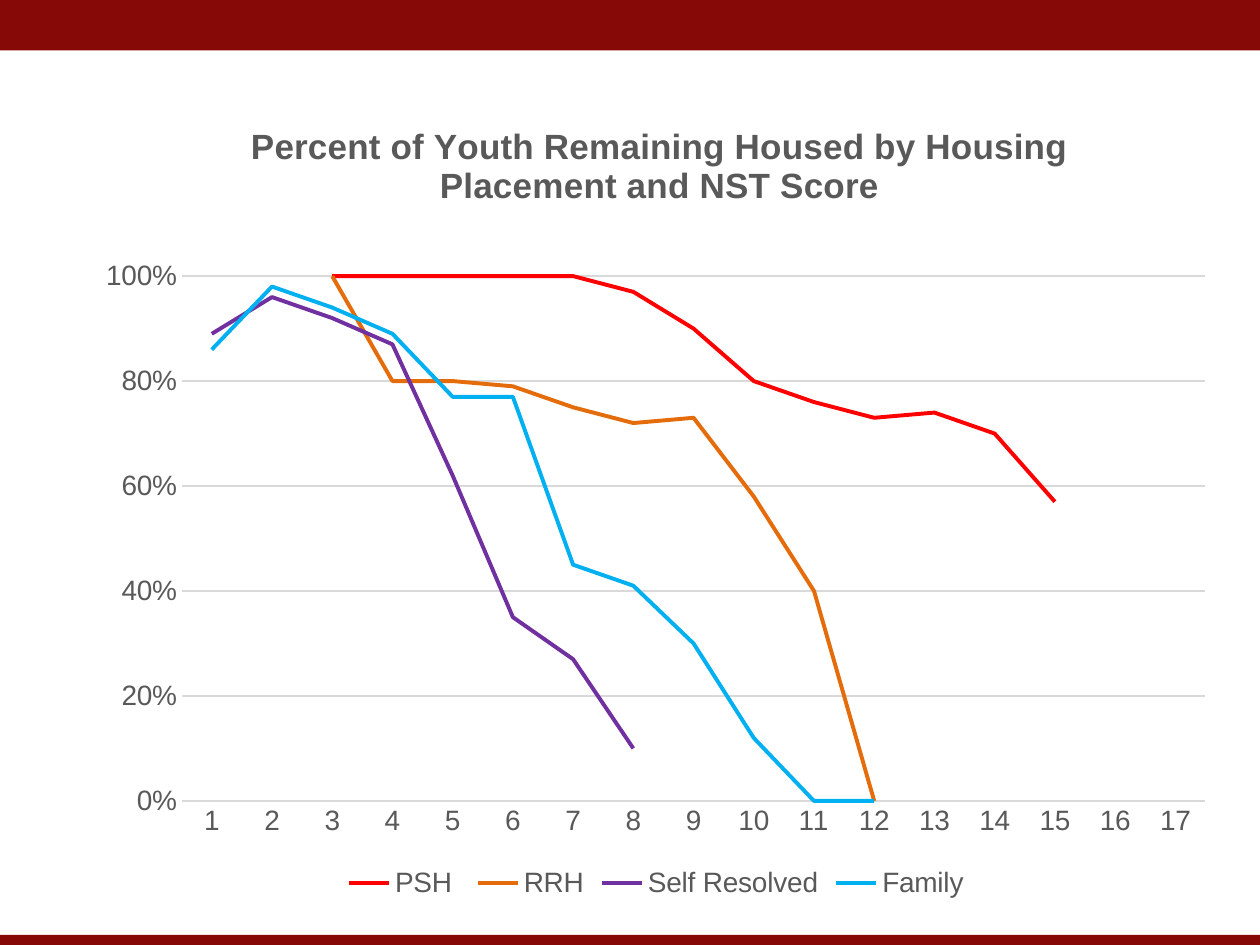
from lxml import etree
from pptx import Presentation
from pptx.chart.data import CategoryChartData
from pptx.dml.color import RGBColor
from pptx.enum.chart import XL_CHART_TYPE, XL_LEGEND_POSITION, XL_TICK_MARK
from pptx.enum.shapes import MSO_SHAPE
from pptx.oxml.ns import qn
from pptx.util import Inches, Pt

LINE = XL_CHART_TYPE.LINE
BOTTOM = XL_LEGEND_POSITION.BOTTOM
NO_TICK = XL_TICK_MARK.NONE
RECT = MSO_SHAPE.RECTANGLE

WIDE, HIGH = 10, 7.5
FACE = "Arial"
MAROON, GRAY, PALE = "860908", "595959", "D9D9D9"
TITLE = "Percent of Youth Remaining Housed by Housing Placement and NST Score"
SCORES = range(1, 18)
SERIES = [
    ("PSH ", "FF0000", 3,
     [1, 1, 1, 1, 1, 0.97, 0.9, 0.8, 0.76, 0.73, 0.74, 0.7, 0.57]),
    ("RRH", "E46C0A", 3,
     [1, 0.8, 0.8, 0.79, 0.75, 0.72, 0.73, 0.58, 0.4, 0]),
    ("Self Resolved", "7030A0", 1,
     [0.89, 0.96, 0.92, 0.87, 0.62, 0.35, 0.27, 0.1, None, 0]),
    ("Family", "00B0F0", 1,
     [0.86, 0.98, 0.94, 0.89, 0.77, 0.77, 0.45, 0.41, 0.3, 0.12, 0, 0]),
]


def color(code):
    return RGBColor.from_string(code)


def style(font, size, bold=False):
    font.name = FACE
    font.size = Pt(size)
    font.bold = bold
    font.color.rgb = color(GRAY)


def stroke(line, code, width):
    line.color.rgb = color(code)
    line.width = Pt(width)


def add_bar(slide, top, height):
    bar = slide.shapes.add_shape(
        RECT, 0, Inches(top), Inches(WIDE), Inches(height))
    bar.shadow.inherit = False
    bar.fill.solid()
    bar.fill.fore_color.rgb = color(MAROON)
    bar.line.fill.background()


def place(owner, index, **parts):
    for old in owner.findall(qn("c:layout")):
        owner.remove(old)
    layout = etree.Element(qn("c:layout"))
    owner.insert(index, layout)
    box = etree.SubElement(layout, qn("c:manualLayout"))
    for tag, value in parts.items():
        etree.SubElement(box, qn(f"c:{tag}")).set("val", str(value))


def add_chart(slide):
    data = CategoryChartData(number_format="0%")
    data.categories = [str(score) for score in SCORES]
    for name, _, start, values in SERIES:
        row = [None] * (start - 1) + values
        data.add_series(name, row + [None] * (len(SCORES) - len(row)))
    frame = slide.shapes.add_chart(
        LINE, Inches(0.67), Inches(0.67), Inches(9.08), Inches(6.5), data)
    chart = frame.chart
    style(chart.font, 16)
    for line, (_, code, _, _) in zip(chart.plots[0].series, SERIES):
        line.smooth = False
        stroke(line.format.line, code, 2.25)
    chart.plots[0].vary_by_categories = False
    return chart


def set_title(chart):
    chart.has_title = True
    text = chart.chart_title.text_frame
    text.text = TITLE
    style(text.paragraphs[0].font, 20, True)
    place(chart._chartSpace.chart.find(qn("c:title")), 1,
          xMode="edge", yMode="edge", x=0.14, y=0.04)


def set_axes(chart):
    for axis in (chart.category_axis, chart.value_axis):
        axis.major_tick_mark = axis.minor_tick_mark = NO_TICK
        style(axis.tick_labels.font, 16)
    stroke(chart.category_axis.format.line, PALE, 0.75)
    scale = chart.value_axis
    scale.minimum_scale, scale.maximum_scale = 0, 1.1
    scale.major_unit = 0.2
    scale.tick_labels.number_format = "0%"
    scale.tick_labels.number_format_is_linked = False
    scale.format.line.fill.background()
    stroke(scale.major_gridlines.format.line, PALE, 0.75)


def set_plot(chart):
    place(chart._chartSpace.chart.plotArea, 0,
          layoutTarget="inner", xMode="edge", yMode="edge",
          x=0.085, y=0.17, w=0.895, h=0.705)


def set_legend(chart):
    chart.has_legend = True
    chart.legend.position = BOTTOM
    chart.legend.include_in_layout = False
    style(chart.legend.font, 16)


def main():
    deck = Presentation()
    deck.slide_width, deck.slide_height = Inches(WIDE), Inches(HIGH)
    slide = deck.slides.add_slide(deck.slide_layouts[6])
    add_bar(slide, 0, 0.4)
    add_bar(slide, 7.42, 0.08)
    chart = add_chart(slide)
    set_title(chart)
    set_axes(chart)
    set_plot(chart)
    set_legend(chart)
    deck.save("out.pptx")


if __name__ == "__main__":
    main()
